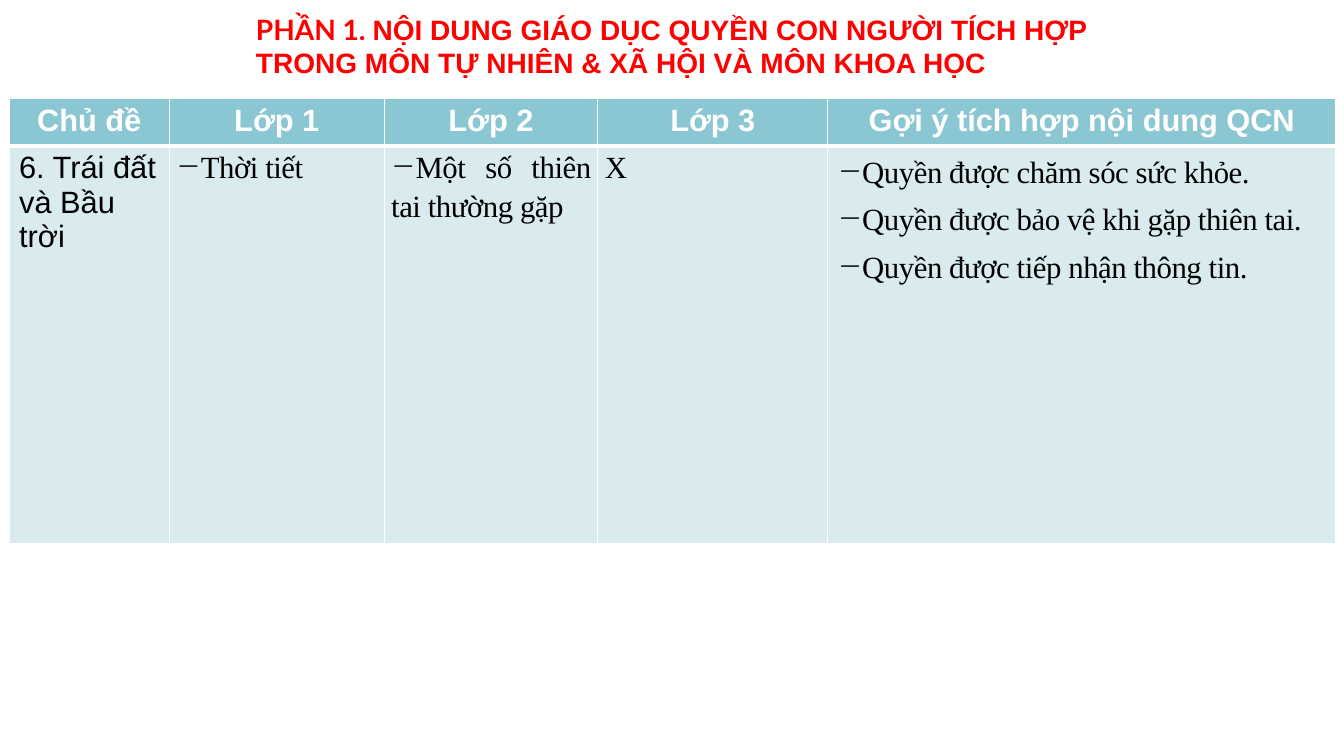
from dataclasses import dataclass

from lxml.etree import SubElement
from pptx import Presentation
from pptx.dml.color import RGBColor
from pptx.enum.text import PP_ALIGN
from pptx.oxml.ns import qn
from pptx.slide import Slide
from pptx.table import _Cell
from pptx.text.text import Font, _Paragraph
from pptx.util import Inches, Pt

COLORS = {"title": "FF0000", "header": "8AC7D3", "body": "DAEBEF",
          "white": "FFFFFF", "black": "000000"}
ROW_HEIGHTS = (0.42, 3.95)


@dataclass(frozen=True)
class Topic:
    heading: str
    width: float
    lines: tuple[str, ...]
    bullet: str = "−"
    detailed: bool = True
    compact: bool = True


TOPICS = (
    Topic("Chủ đề", 1.59, ("6. Trái đất và Bầu trời",), detailed=False, compact=False),
    Topic("Lớp 1", 2.13, ("Thời tiết",)),
    Topic("Lớp 2", 2.12, ("Một số thiên tai thường gặp",)),
    Topic("Lớp 3", 2.28, ("X",), bullet=""),
    Topic("Gợi ý tích hợp nội dung QCN", 5.04,
          ("Quyền được chăm sóc sức khỏe.",
           "Quyền được bảo vệ khi gặp thiên tai.",
           "Quyền được tiếp nhận thông tin."), compact=False),
)


def set_font(font: Font, name: str, size: int, color: str, bold: bool) -> None:
    font.name = name
    font.size = Pt(size)
    font.bold = bold
    font.color.rgb = RGBColor.from_string(COLORS[color])


def paint_cell(cell: _Cell, fill: str, bottom_width: int) -> None:
    """Give the cell white borders and a solid fill."""
    properties = cell._tc.get_or_add_tcPr()
    for side, width in (("L", 1), ("R", 1), ("T", 1), ("B", bottom_width)):
        border = SubElement(properties, qn(f"a:ln{side}"), w=str(Pt(width)))
        solid = SubElement(border, qn("a:solidFill"))
        SubElement(solid, qn("a:srgbClr"), val=COLORS["white"])
    cell.fill.solid()
    cell.fill.fore_color.rgb = RGBColor.from_string(COLORS[fill])


def format_detail(paragraph: _Paragraph, bullet: str, first: bool) -> None:
    """Set the justified layout, the bullet and the tight letter spacing."""
    properties = paragraph._p.get_or_add_pPr()
    if bullet:
        properties.set("marL", "0")
        properties.set("indent", str(Inches(-0.38)))
        SubElement(properties, qn("a:buChar"), char=bullet)
    tabs = SubElement(properties, qn("a:tabLst"))
    SubElement(tabs, qn("a:tab"), pos=str(Inches(0.16)), algn="l")
    paragraph.alignment = PP_ALIGN.JUSTIFY
    paragraph.line_spacing = 1.15
    paragraph.space_before = Pt(0 if first else 3)
    paragraph.space_after = Pt(3)
    for run in paragraph.runs:
        run._r.get_or_add_rPr().set("spc", "-30")


def fill_header(cell: _Cell, topic: Topic) -> None:
    paint_cell(cell, "header", 3)
    cell.text = topic.heading
    heading = cell.text_frame.paragraphs[0]
    heading.alignment = PP_ALIGN.CENTER
    set_font(heading.font, "Arial", 22, "white", True)


def fill_body(cell: _Cell, topic: Topic) -> None:
    paint_cell(cell, "body", 1)
    if topic.compact:
        cell.margin_left = cell.margin_right = Inches(0.07)
        cell.margin_top = cell.margin_bottom = Inches(0)
    cell.text = "\n".join(topic.lines)
    for index, paragraph in enumerate(cell.text_frame.paragraphs):
        if topic.detailed:
            format_detail(paragraph, topic.bullet, index == 0)
        font_name = "Times New Roman" if topic.detailed else "Arial"
        set_font(paragraph.font, font_name, 22, "black", False)


def add_title(slide: Slide) -> None:
    title = slide.shapes.add_textbox(Inches(2.44), Inches(0.07), Inches(8.76), Inches(1.13))
    title.text_frame.word_wrap = True
    paragraph = title.text_frame.paragraphs[0]
    for text, font_name in (
        ("PHẦN 1. ", "Lato"),
        ("NỘI DUNG GIÁO DỤC QUYỀN CON NGƯỜI TÍCH HỢP TRONG MÔN "
         "TỰ NHIÊN & XÃ HỘI VÀ MÔN KHOA HỌC", "Arial"),
    ):
        run = paragraph.add_run()
        run.text = text
        set_font(run.font, font_name, 20, "title", True)


def add_topic_table(slide: Slide) -> None:
    table = slide.shapes.add_table(
        len(ROW_HEIGHTS), len(TOPICS), Inches(0.09), Inches(0.98),
        Inches(sum(topic.width for topic in TOPICS)), Inches(sum(ROW_HEIGHTS))).table
    table.horz_banding = False
    for row, height in zip(table.rows, ROW_HEIGHTS):
        row.height = Inches(height)
    for index, topic in enumerate(TOPICS):
        table.columns[index].width = Inches(topic.width)
        fill_header(table.cell(0, index), topic)
        fill_body(table.cell(1, index), topic)


def main() -> None:
    presentation = Presentation()
    presentation.slide_width = Inches(13.33)
    presentation.slide_height = Inches(7.5)
    slide = presentation.slides.add_slide(presentation.slide_layouts[6])
    add_title(slide)
    add_topic_table(slide)
    presentation.save("out.pptx")


if __name__ == "__main__":
    main()
